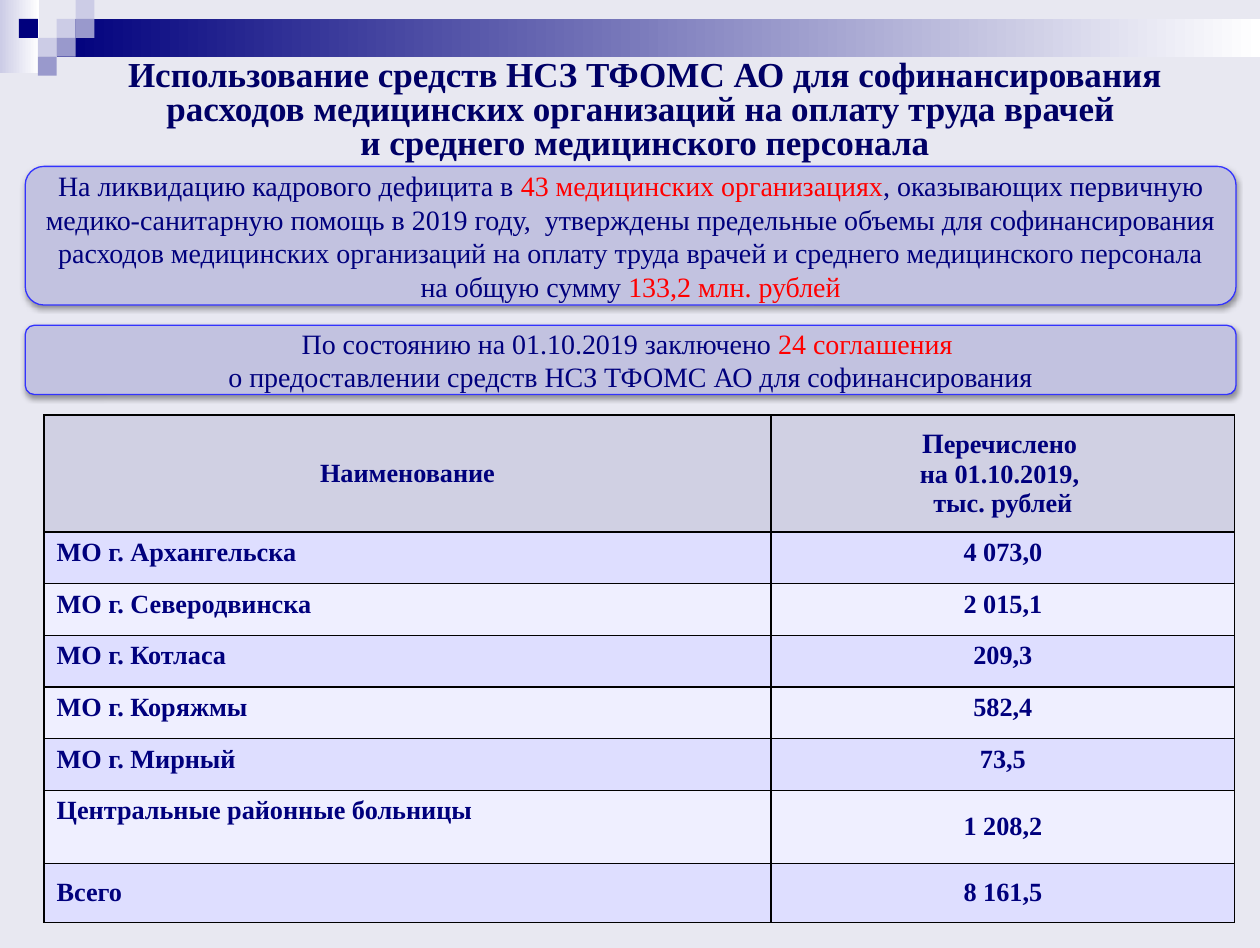
from lxml import etree
from pptx import Presentation
from pptx.dml.color import RGBColor
from pptx.enum.shapes import MSO_SHAPE
from pptx.enum.text import MSO_ANCHOR, MSO_AUTO_SIZE, PP_ALIGN
from pptx.oxml import parse_xml
from pptx.oxml.ns import nsdecls, qn
from pptx.util import Inches, Pt

THEME = {
    "font": "Times New Roman",
    "title_size": 20, "panel_size": 16, "table_size": 15,
    "background": "E8E8F1", "title": "000066", "text": "00007D", "accent": "FF0000",
    "panel": "C2C2E0", "panel_line": "3333FF",
    "header": "D0D0E3", "bands": ("DEDEFF", "EFEFFF"), "border": "000000",
    "navy": "00007D", "pale": "CCCCE6", "violet": "9999CC", "white": "FFFFFF",
}

TITLE = ("Использование средств НСЗ ТФОМС АО для софинансирования "
         "расходов медицинских организаций на оплату труда врачей \n"
         "и среднего медицинского персонала")

# Top, height, then (words, colour) spans
PANELS = [
    (1.32, 1.1, [
        ("На ликвидацию кадрового дефицита в ", "text"),
        ("43 медицинских организациях", "accent"),
        (", оказывающих первичную медико-санитарную помощь в 2019 году,  утверждены "
         "предельные объемы для софинансирования расходов медицинских организаций на "
         "оплату труда врачей и среднего медицинского персонала на общую сумму ", "text"),
        ("133,2 млн. рублей", "accent"),
    ]),
    (2.58, 0.55, [
        ("По состоянию на 01.10.2019 заключено ", "text"),
        ("24 соглашения \n", "accent"),
        ("о предоставлении средств НСЗ ТФОМС АО для софинансирования", "text"),
    ]),
]

ROWS = [
    ("Наименование", "Перечислено \nна 01.10.2019, \nтыс. рублей"),
    ("МО г. Архангельска", "4 073,0"),
    ("МО г. Северодвинска", "2 015,1"),
    ("МО г. Котласа", "209,3"),
    ("МО г. Коряжмы", "582,4"),
    ("МО г. Мирный", "73,5"),
    ("Центральные районные больницы", "1 208,2"),
    ("Всего", "8 161,5"),
]
COLUMN_WIDTHS = (5.77, 3.68)
ROW_HEIGHTS = (0.93, *[0.41] * 5, 0.58, 0.47)
MIDDLE_CELLS = {(0, 0), (0, 1), (6, 1), (7, 0), (7, 1)}

# Left, top, width, height, colours (two make a gradient)
BARS = [(0, 0, 0.31, 0.58, ("pale", "white")), (0.45, 0.15, 9.55, 0.3, ("navy", "white"))]
TILE = 0.15
# Column and row on the tile grid
TILES = [(3, 1, "pale"), (4, 0, "pale"), (4, 1, "violet"), (2, 2, "pale"),
         (1, 1, "navy"), (3, 2, "violet"), (2, 3, "violet")]


def color(name):
    return RGBColor.from_string(THEME.get(name, name))


def add_bar(slide, left, top, width, height, names):
    bar = slide.shapes.add_shape(MSO_SHAPE.RECTANGLE, *map(Inches, (left, top, width, height)))
    bar.shadow.inherit = False
    bar.line.fill.background()
    if len(names) == 1:
        bar.fill.solid()
        bar.fill.fore_color.rgb = color(names[0])
        return
    bar.fill.gradient()
    bar.fill.gradient_angle = 0
    for stop, name in zip(bar.fill.gradient_stops, names):
        stop.color.rgb = color(name)


def write(frame, spans, size, bold=False, align=PP_ALIGN.CENTER):
    """Fill the first paragraph with coloured spans; a newline is a line break."""
    para = frame.paragraphs[0]
    para.alignment = align
    for words, name in spans:
        for index, line in enumerate(words.split("\n")):
            if index:
                para.add_line_break()
            if line:
                span = para.add_run()
                span.text = line
                span.font.name = THEME["font"]
                span.font.size = Pt(size)
                span.font.bold = bold
                span.font.color.rgb = color(name)
    return para


def add_title(slide):
    title = slide.shapes.title
    title.left, title.top, title.width, title.height = map(Inches, (0.67, 0.45, 8.9, 0.87))
    frame = title.text_frame
    frame.word_wrap = True
    frame.auto_size = MSO_AUTO_SIZE.NONE
    frame.vertical_anchor = MSO_ANCHOR.MIDDLE
    write(frame, [(TITLE, "title")], THEME["title_size"], True).line_spacing = 0.8


def add_panel(slide, top, height, spans):
    panel = slide.shapes.add_shape(MSO_SHAPE.ROUNDED_RECTANGLE,
                                   *map(Inches, (0.2, top, 9.61, height)))
    panel.adjustments[0] = 0.135
    panel.fill.solid()
    panel.fill.fore_color.rgb = color("panel")
    panel.line.color.rgb = color("panel_line")
    panel.line.width = Pt(0.75)
    panel.shadow.inherit = False
    effects = panel._element.spPr.find(qn("a:effectLst"))
    effects.append(parse_xml(
        f'<a:outerShdw {nsdecls("a")} blurRad="{Pt(3.1)}" dist="{Pt(1.6)}" dir="5400000" '
        'rotWithShape="0"><a:srgbClr val="000000"><a:alpha val="38000"/></a:srgbClr>'
        '</a:outerShdw>'))
    panel.text_frame.word_wrap = True
    panel.text_frame.vertical_anchor = MSO_ANCHOR.MIDDLE
    write(panel.text_frame, spans, THEME["panel_size"])


def add_borders(cell):
    properties = cell._tc.get_or_add_tcPr()
    for index, side in enumerate(("lnL", "lnR", "lnT", "lnB")):
        line = etree.Element(qn(f"a:{side}"), w=str(Pt(1)))
        fill = etree.SubElement(line, qn("a:solidFill"))
        etree.SubElement(fill, qn("a:srgbClr"), val=THEME["border"])
        properties.insert(index, line)


def add_payments(slide):
    table = slide.shapes.add_table(
        len(ROWS), len(COLUMN_WIDTHS), Inches(0.35), Inches(3.29),
        Inches(sum(COLUMN_WIDTHS)), Inches(sum(ROW_HEIGHTS))).table
    for column, width in zip(table.columns, COLUMN_WIDTHS):
        column.width = Inches(width)
    for row, height in zip(table.rows, ROW_HEIGHTS):
        row.height = Inches(height)
    for r, values in enumerate(ROWS):
        for c, words in enumerate(values):
            cell = table.cell(r, c)
            cell.fill.solid()
            cell.fill.fore_color.rgb = color(THEME["bands"][(r - 1) % 2] if r else "header")
            middle = (r, c) in MIDDLE_CELLS
            cell.vertical_anchor = MSO_ANCHOR.MIDDLE if middle else MSO_ANCHOR.TOP
            align = PP_ALIGN.LEFT if r and c == 0 else PP_ALIGN.CENTER
            spans = [(words, "text")]
            if (r, c) == (0, 1):
                spans = [(words[0], "text"), (words[1:], "text")]
            para = write(cell.text_frame, spans, THEME["table_size"], True, align)
            if len(spans) > 1:
                para.runs[0].font.size = Pt(THEME["panel_size"])
            add_borders(cell)


def main():
    deck = Presentation()
    deck.slide_width, deck.slide_height = Inches(10), Inches(7.52)
    slide = deck.slides.add_slide(deck.slide_layouts[5])
    slide.background.fill.solid()
    slide.background.fill.fore_color.rgb = color("background")
    for bar in BARS:
        add_bar(slide, *bar)
    for column, row, name in TILES:
        add_bar(slide, column * TILE, row * TILE, TILE, TILE, (name,))
    add_title(slide)
    for panel in PANELS:
        add_panel(slide, *panel)
    add_payments(slide)
    deck.save("out.pptx")


if __name__ == "__main__":
    main()
